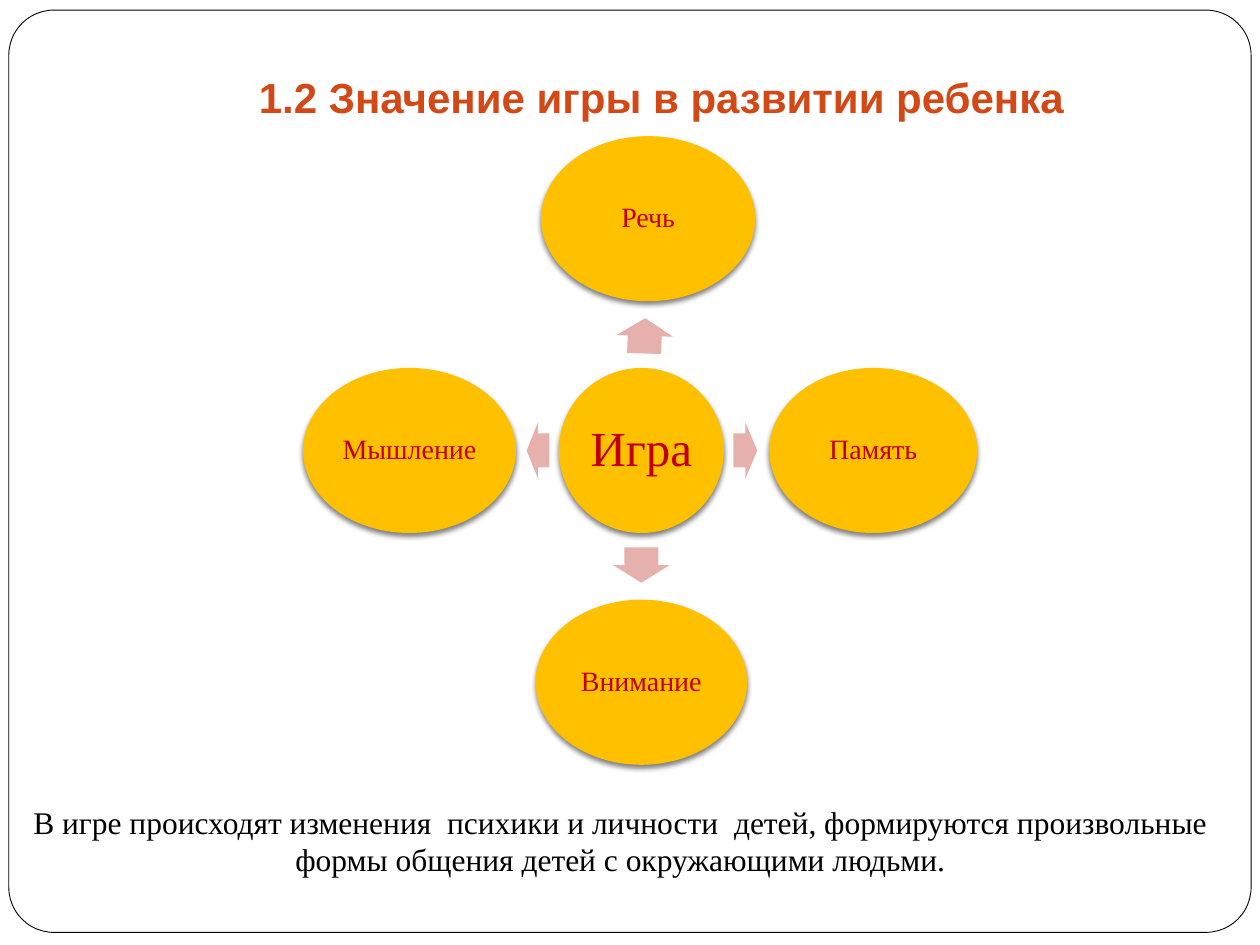
import math
from dataclasses import dataclass

import lxml.etree
import pptx
import pptx.dml.color
import pptx.enum.shapes
import pptx.enum.text
import pptx.oxml.ns
import pptx.util

SHAPE = pptx.enum.shapes.MSO_SHAPE
ALIGN = pptx.enum.text.PP_ALIGN
ANCHOR = pptx.enum.text.MSO_ANCHOR

# The slide is a grid of 100 columns by 75 rows of square cells.
CELL = pptx.util.Inches(0.1)
COLUMNS, ROWS = 100, 75

CENTER = (50.9, 35.75)
RING_RADIUS = 18.4
BUBBLE_HEIGHT = 13.1
ARROW_WIDTH = 4.5

# label, bubble width, clockwise angle, arrow distance, arrow length
BRANCHES = [
    ("Речь", 17, 271.7, 9.1, 2.8),
    ("Память", 16.5, 0, 8.25, 1.9),
    ("Внимание", 16.8, 90, 9.1, 2.8),
    ("Мышление", 16.9, 180, 8.2, 1.8),
]


@dataclass(frozen=True)
class Theme:
    paper: str = "FFFFFF"
    ink: str = "000000"
    title: str = "D34817"
    bubble: str = "FFC000"
    label: str = "C00000"
    arrow: str = "E6B1AC"
    heading_font: str = "Arial"
    text_font: str = "Times New Roman"
    title_size: int = 24
    hub_size: int = 28
    label_size: int = 16
    note_size: int = 18


THEME = Theme()


def rgb(value):
    return pptx.dml.color.RGBColor.from_string(value)


def cells(*values):
    return [round(v * CELL) for v in values]


def centered(center, width, height):
    """Turn a centre point and a size into left, top, width and height."""
    return cells(center[0] - width / 2, center[1] - height / 2, width, height)


def on_ring(angle, distance):
    a = math.radians(angle)
    return (CENTER[0] + distance * math.cos(a),
            CENTER[1] + distance * math.sin(a))


def write(tf, text, font, size, color, bold=False):
    tf.word_wrap = True
    tf.text = text
    p = tf.paragraphs[0]
    p.alignment = ALIGN.CENTER
    r = p.runs[0]
    r.font.name = font
    r.font.size = pptx.util.Pt(size)
    r.font.color.rgb = rgb(color)
    r.font.bold = bold
    return p


def add_filled(slide, kind, box, color):
    sp = slide.shapes.add_shape(kind, *box)
    sp.shadow.inherit = False
    sp.fill.solid()
    sp.fill.fore_color.rgb = rgb(color)
    sp.line.fill.background()
    return sp


def add_drop_shadow(sp):
    effects = sp._element.spPr.find(pptx.oxml.ns.qn("a:effectLst"))
    shadow = lxml.etree.SubElement(
        effects, pptx.oxml.ns.qn("a:outerShdw"),
        blurRad=str(pptx.util.Pt(3)), dist=str(pptx.util.Pt(2)),
        dir="5400000", rotWithShape="0")
    color = lxml.etree.SubElement(
        shadow, pptx.oxml.ns.qn("a:srgbClr"), val=THEME.ink)
    lxml.etree.SubElement(color, pptx.oxml.ns.qn("a:alpha"), val="50000")


def add_frame(slide):
    """Put the rounded page border behind everything else."""
    box = cells(0.7, 0.8, 98.6, 73.2)
    sp = add_filled(slide, SHAPE.ROUNDED_RECTANGLE, box, THEME.paper)
    sp.adjustments[0] = 0.049
    sp.line.color.rgb = rgb(THEME.ink)
    sp.line.width = pptx.util.Pt(0.5)
    slide.shapes._spTree.insert(2, sp._element)


def set_title(slide, text):
    sp = slide.shapes.title
    sp.left, sp.top, sp.width, sp.height = cells(10, 3, 85, 7.7)
    tf = sp.text_frame
    tf.vertical_anchor = ANCHOR.BOTTOM
    tf.margin_bottom = pptx.util.Inches(0.1)
    write(tf, text, THEME.heading_font, THEME.title_size, THEME.title, True)


def add_bubble(slide, text, center, width, size):
    sp = add_filled(slide, SHAPE.OVAL,
                    centered(center, width, BUBBLE_HEIGHT), THEME.bubble)
    add_drop_shadow(sp)
    tf = sp.text_frame
    tf.vertical_anchor = ANCHOR.MIDDLE
    tf.margin_left = tf.margin_right = pptx.util.Inches(0.02)
    tf.margin_top = tf.margin_bottom = pptx.util.Inches(0.02)
    p = write(tf, text, THEME.text_font, size, THEME.label)
    p.line_spacing = 0.9


def add_arrow(slide, angle, distance, length):
    box = centered(on_ring(angle, distance), length, ARROW_WIDTH)
    sp = add_filled(slide, SHAPE.RIGHT_ARROW, box, THEME.arrow)
    sp.adjustments[0] = 0.6
    sp.adjustments[1] = 0.5
    sp.rotation = angle


def add_note(slide, text):
    sp = slide.shapes.add_textbox(*cells(1.6, 63.2, 95.3, 11.8))
    write(sp.text_frame, text, THEME.text_font, THEME.note_size, THEME.ink)


def main():
    prs = pptx.Presentation()
    prs.slide_width, prs.slide_height = cells(COLUMNS, ROWS)
    slide = prs.slides.add_slide(prs.slide_layouts.get_by_name("Title Only"))

    add_frame(slide)
    set_title(slide, "1.2 Значение игры в развитии ребенка")
    add_bubble(slide, "Игра", CENTER, BUBBLE_HEIGHT, THEME.hub_size)
    for label, width, angle, distance, length in BRANCHES:
        add_arrow(slide, angle, distance, length)
        add_bubble(slide, label, on_ring(angle, RING_RADIUS), width,
                   THEME.label_size)
    add_note(slide, "В игре происходят изменения  психики и личности  детей, "
                    "формируются произвольные формы общения детей "
                    "с окружающими людьми.")
    prs.save("out.pptx")


if __name__ == "__main__":
    main()
